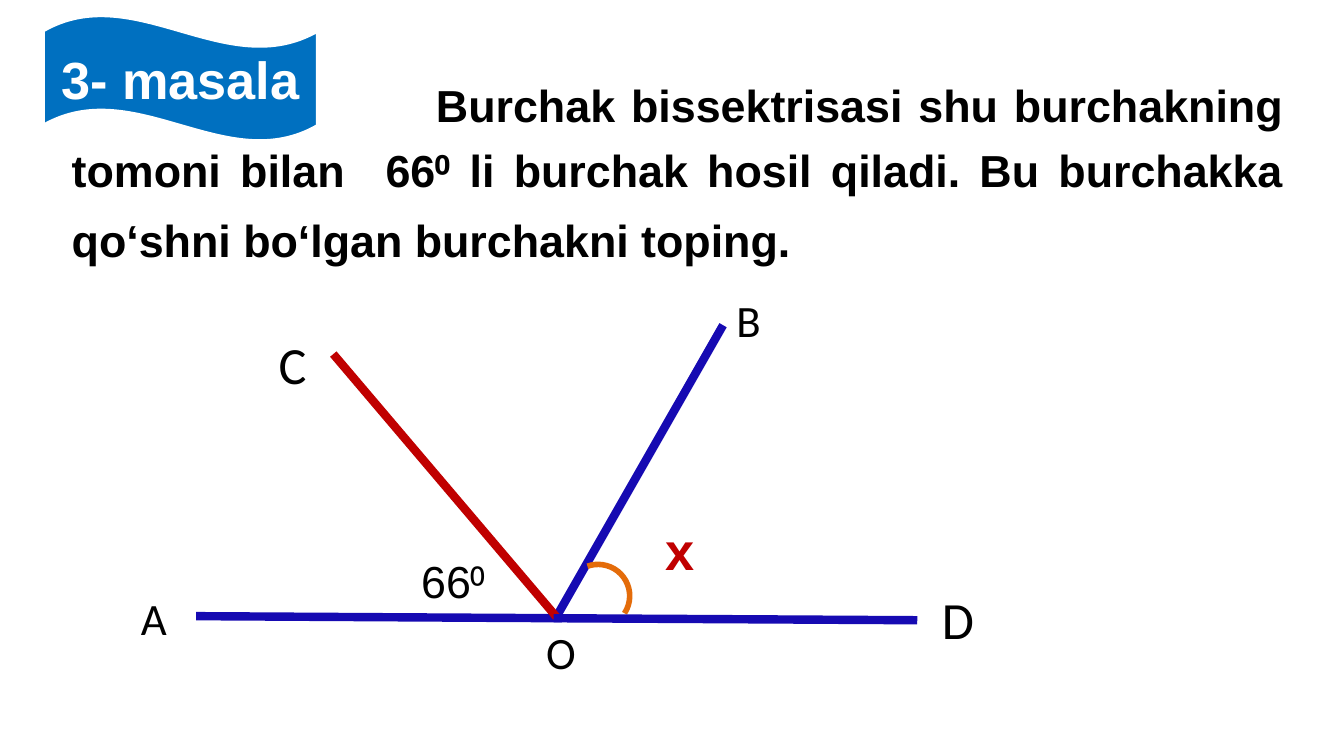
from lxml.etree import SubElement
from pptx import Presentation
from pptx.dml.color import RGBColor
from pptx.enum.shapes import MSO_CONNECTOR, MSO_SHAPE
from pptx.enum.text import MSO_ANCHOR, MSO_AUTO_SIZE, PP_ALIGN
from pptx.oxml.ns import qn
from pptx.util import Emu, Pt

EMU_PER_PX = 4572
COLORS = {
    "ink": "000000",
    "white": "FFFFFF",
    "banner": "0070C0",
    "side": "160AB2",
    "bisector": "C00000",
    "arc": "E46C0A",
}


def px(length):
    return Emu(length * EMU_PER_PX)


def color(name):
    return RGBColor.from_string(COLORS[name])


def add_span(para, text, size=24, font="Arial", ink="ink", bold=False):
    span = para.add_run()
    span.text = text
    span.font.size = Pt(size)
    span.font.name = font
    span.font.bold = bold
    span.font.color.rgb = color(ink)


def add_text(page, text, left, top, width, height, wrap=False, **style):
    box = page.shapes.add_textbox(px(left), px(top), px(width), px(height))
    frame = box.text_frame
    frame.word_wrap = wrap
    frame.auto_size = MSO_AUTO_SIZE.SHAPE_TO_FIT_TEXT
    para = frame.paragraphs[0]
    spans = [(text, style)] if isinstance(text, str) else text
    for words, span_style in spans:
        add_span(para, words, **{**style, **span_style})
    return para


def add_ray(page, start, end, ink):
    ray = page.shapes.add_connector(
        MSO_CONNECTOR.STRAIGHT, *(px(value) for value in start + end))
    ray.line.color.rgb = color(ink)
    ray.line.width = Pt(4.5)
    SubElement(ray._element.spPr, qn("a:effectLst"))


def add_outline(page, kind, left, top, width, height, ink, weight):
    shape = page.shapes.add_shape(kind, px(left), px(top), px(width), px(height))
    shape.shadow.inherit = False
    shape.fill.background()
    shape.line.color.rgb = color(ink)
    shape.line.width = Pt(weight)
    return shape


def add_banner(page, text):
    banner = add_outline(page, MSO_SHAPE.WAVE, 64, 22, 409, 189, "white", 2)
    banner.fill.solid()
    banner.fill.fore_color.rgb = color("banner")
    banner.text_frame.vertical_anchor = MSO_ANCHOR.MIDDLE
    para = banner.text_frame.paragraphs[0]
    para.alignment = PP_ALIGN.CENTER
    add_span(para, text, size=28, ink="white", bold=True)


def add_problem(page):
    spans = [
        (" ", {"size": 32}),
        ("Burchak bissektrisasi shu burchakning tomoni bilan ", {}),
        (" ", {"size": 28}),
        ("66⁰ li burchak hosil qiladi. Bu burchakka qo‘shni bo‘lgan burchakni toping.", {}),
        (" ", {"size": 32}),
    ]
    para = add_text(page, spans, 56, 84, 1873, 330, wrap=True, bold=True)
    para.alignment = PP_ALIGN.JUSTIFY
    properties = para._p.get_or_add_pPr()
    properties.set("marL", str(px(31)))
    properties.set("indent", str(px(512)))


def add_angle_arc(page):
    arc = add_outline(page, MSO_SHAPE.ARC, 843, 840, 94, 94, "arc", 3)
    arc.rotation = 53.6
    arc.adjustments[0] = 118.01
    arc.adjustments[1] = 203.8


def main():
    deck = Presentation()
    deck.slide_width, deck.slide_height = px(2000), px(1125)
    page = deck.slides.add_slide(deck.slide_layouts[6])

    add_problem(page)
    add_text(page, "66⁰", 607, 814, 156, 100)
    vertex = (828, 918)
    add_ray(page, (292, 917), (836, 920), "side")
    add_ray(page, vertex, (1076, 484), "side")
    add_angle_arc(page)
    add_text(page, "x", 970, 762, 110, 114, wrap=True,
             size=28, ink="bisector", bold=True)
    add_banner(page, "3- masala")
    add_ray(page, vertex, (496, 527), "bisector")
    add_ray(page, (824, 920), (1365, 923), "side")

    for name, left, top, width, height, size in (
        ("A", 190, 870, 80, 100, 24),
        ("O", 793, 920, 84, 100, 24),
        ("B", 1076, 426, 76, 100, 24),
        ("C", 395, 484, 82, 114, 28),
        ("D", 1382, 864, 88, 114, 28),
    ):
        add_text(page, name, left, top, width, height, size=size, font="Calibri")

    deck.save("out.pptx")


if __name__ == "__main__":
    main()
